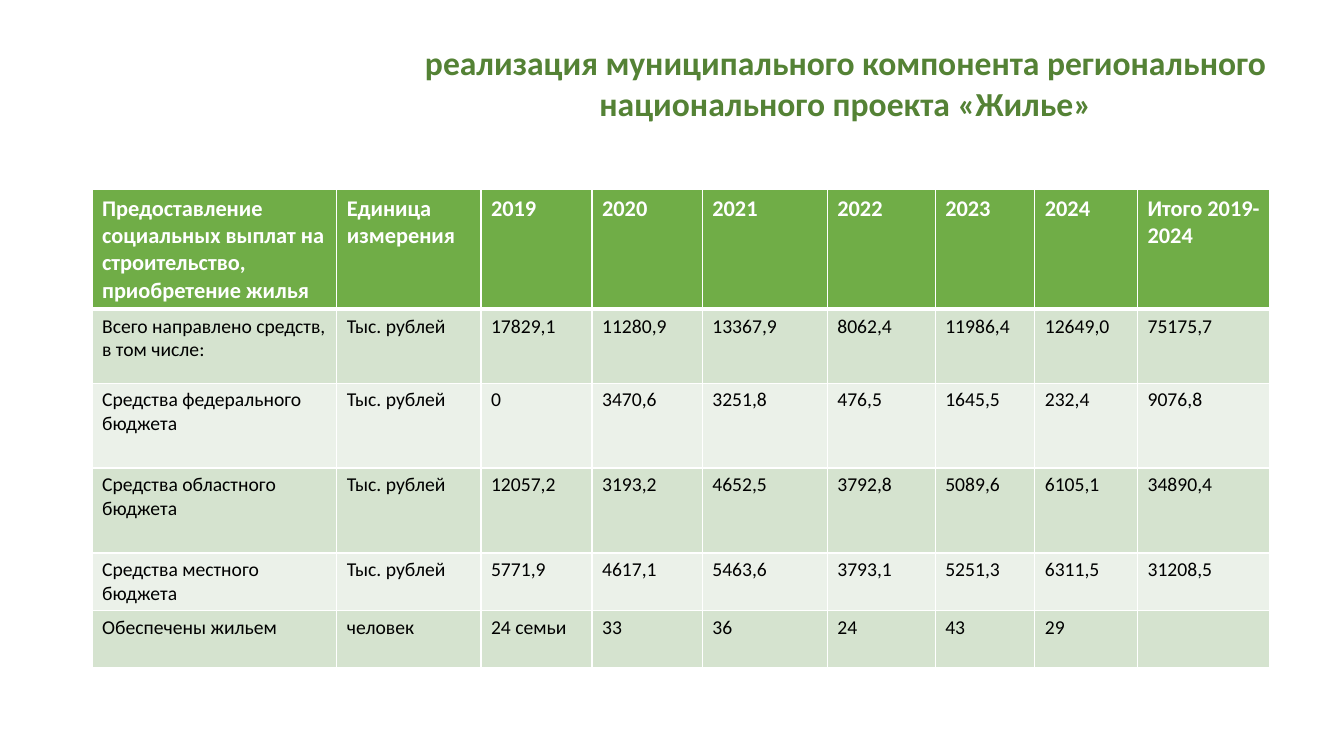
from lxml import etree
from pptx import Presentation
from pptx.dml.color import RGBColor
from pptx.enum.text import MSO_ANCHOR, MSO_AUTO_SIZE, PP_ALIGN
from pptx.oxml.ns import qn
from pptx.util import Cm, Pt

TOP = MSO_ANCHOR.TOP
FIXED = MSO_AUTO_SIZE.NONE
LEFT, CENTER = PP_ALIGN.LEFT, PP_ALIGN.CENTER

WHITE = RGBColor(0xFF, 0xFF, 0xFF)
BLACK = RGBColor(0, 0, 0)
DARK = RGBColor(0x54, 0x82, 0x35)
GREEN = RGBColor(0x70, 0xAD, 0x47)
BANDS = (RGBColor(0xD5, 0xE3, 0xCF), RGBColor(0xEB, 0xF1, 0xE9))

TITLE = "реализация муниципального компонента регионального\nнационального проекта «Жилье»"
UNIT = "Тыс. рублей"
HEAD = ["Предоставление социальных выплат на строительство, приобретение жилья",
        "Единица\nизмерения", "2019", "2020", "2021", "2022", "2023", "2024",
        "Итого 2019-2024"]
BODY = [
    ["Всего направлено средств, в том числе:", UNIT, "17829,1", "11280,9",
     "13367,9", "8062,4", "11986,4", "12649,0", "75175,7"],
    ["Средства федерального бюджета", UNIT, "0", "3470,6",
     "3251,8", "476,5", "1645,5", "232,4", "9076,8"],
    ["Средства областного бюджета", UNIT, "12057,2", "3193,2",
     "4652,5", "3792,8", "5089,6", "6105,1", "34890,4"],
    ["Средства местного бюджета", UNIT, "5771,9", "4617,1",
     "5463,6", "3793,1", "5251,3", "6311,5", "31208,5"],
    ["Обеспечены жильем", "человек", "24 семьи", "33", "36", "24", "43", "29", ""],
]
WIDTHS = [6.17, 3.63, 2.8, 2.78, 3.15, 2.72, 2.51, 2.59, 3.33]
HEIGHTS = [2.97, 1.86, 2.14, 2.14, 1.43, 1.42]


def write(frame, text, size=14, color=BLACK, bold=False, align=LEFT, font="Calibri"):
    """Fill a text frame, one paragraph per line."""
    frame.text = text
    for para in frame.paragraphs:
        para.alignment = align
        para.font.size = Pt(size)
        for run in para.runs:
            run.font.name = font
            run.font.size = Pt(size)
            run.font.bold = bold
            run.font.color.rgb = color


class Deck:
    """Hold the slide and its style."""

    def __init__(self):
        """Start a deck with one titled slide."""
        self.show = Presentation()
        self.show.slide_width, self.show.slide_height = Cm(33.87), Cm(19.05)
        self.slide = self.show.slides.add_slide(self.show.slide_layouts[5])

    def title(self, text, left, top, width, height):
        """Place and format the title."""
        box = self.slide.shapes.title
        box.left, box.top, box.width, box.height = map(Cm, (left, top, width, height))
        frame = box.text_frame
        frame.word_wrap = True
        frame.auto_size = FIXED
        frame.vertical_anchor = TOP
        write(frame, text, size=24, color=DARK, bold=True, align=CENTER)

    def edge(self, cell, side, width):
        """Draw one white cell border."""
        props = cell._tc.get_or_add_tcPr()
        line = etree.SubElement(props, qn("a:ln" + side), w=str(Pt(width)))
        fill = etree.SubElement(line, qn("a:solidFill"))
        etree.SubElement(fill, qn("a:srgbClr"), val=str(WHITE))

    def table(self, rows, left, top):
        """Add the table with a green head and banded rows."""
        grid = self.slide.shapes.add_table(
            len(rows), len(WIDTHS), Cm(left), Cm(top),
            Cm(sum(WIDTHS)), Cm(sum(HEIGHTS))).table
        for col, width in zip(grid.columns, WIDTHS):
            col.width = Cm(width)
        for r, (texts, height) in enumerate(zip(rows, HEIGHTS)):
            grid.rows[r].height = Cm(height)
            head = r == 0
            look = dict(size=16, color=WHITE, bold=True) if head else {}
            for c, text in enumerate(texts):
                cell = grid.cell(r, c)
                for side in "LRTB":
                    thick = (r, side) in ((0, "B"), (1, "T"))
                    self.edge(cell, side, 3 if thick else 1)
                cell.fill.solid()
                cell.fill.fore_color.rgb = GREEN if head else BANDS[(r - 1) % 2]
                write(cell.text_frame, text, **look)


def main():
    """Build and save the slide."""
    deck = Deck()
    deck.title(TITLE, 10.21, 0.94, 22.2, 2.31)
    deck.table([HEAD] + BODY, 2.32, 4.78)
    deck.show.save("out.pptx")


if __name__ == "__main__":
    main()
